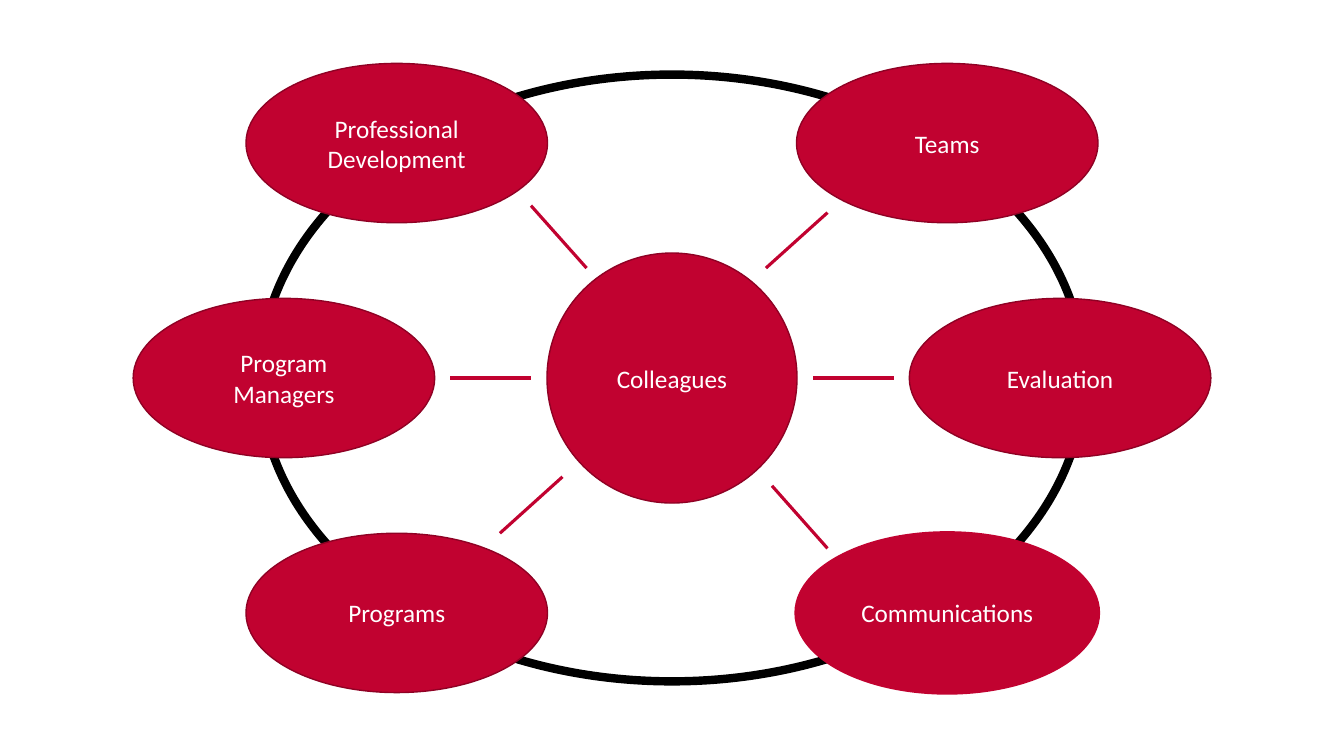
from lxml.etree import SubElement
from pptx import Presentation
from pptx.dml.color import RGBColor
from pptx.enum.shapes import MSO_CONNECTOR as CONNECTOR, MSO_SHAPE as SHAPE
from pptx.enum.text import MSO_ANCHOR as ANCHOR, PP_ALIGN as ALIGN
from pptx.oxml.ns import qn
from pptx.util import Pt

WIDTH, HEIGHT = 960, 540
CRIMSON, DARK_CRIMSON, BLACK, WHITE = "C10230", "8F0124", "000000", "FFFFFF"

# Offsets are in points from the slide centre.
SIDE_X, CORNER_X, CORNER_Y = 277.2, 196.6, 167.8
GROUPS = [
    ("Programs", -CORNER_X, CORNER_Y),
    ("Program Managers", -SIDE_X, 0),
    ("Professional Development", -CORNER_X, -CORNER_Y),
    ("Teams", CORNER_X, -CORNER_Y),
    ("Evaluation", SIDE_X, 0),
]
SPOKES = [
    ((-78.2, 70.6), (-122.9, 110.9)),
    ((111.1, -118.1), (67.1, -78.5)),
    ((-100.7, 0), (-158.3, 0)),
    ((158.5, 0), (100.9, 0)),
    ((-61, -78.5), (-100.7, -123.1)),
    ((111.1, 121.7), (71.4, 77)),
]


def color(value):
    return RGBColor.from_string(value)


class Diagram:
    font = "Calibri"
    font_size = 18

    def __init__(self, slide):
        self.shapes = slide.shapes

    def point(self, dx, dy):
        """Turn an offset from the slide centre into a slide position."""
        return Pt(WIDTH / 2 + dx), Pt(HEIGHT / 2 + dy)

    def ellipse(self, dx, dy, width, height, line, weight):
        left, top = self.point(dx - width / 2, dy - height / 2)
        sp = self.shapes.add_shape(SHAPE.OVAL, left, top, Pt(width), Pt(height))
        sp.shadow.inherit = False
        sp.line.color.rgb = color(line)
        sp.line.width = Pt(weight)
        return sp

    def ring(self, width, height):
        self.ellipse(0, 0, width, height, BLACK, 6).fill.background()

    def bubble(self, text, dx, dy, width=215.4, height=113.8, line=DARK_CRIMSON, weight=1):
        sp = self.ellipse(dx, dy, width, height, line, weight)
        sp.fill.solid()
        sp.fill.fore_color.rgb = color(CRIMSON)
        tf = sp.text_frame
        tf.text = text
        tf.word_wrap = True
        tf.vertical_anchor = ANCHOR.MIDDLE
        p = tf.paragraphs[0]
        p.alignment = ALIGN.CENTER
        font = p.runs[0].font
        font.name = self.font
        font.size = Pt(self.font_size)
        font.color.rgb = color(WHITE)

    def spoke(self, start, end):
        line = self.shapes.add_connector(
            CONNECTOR.STRAIGHT, *self.point(*start), *self.point(*end))
        line.line.color.rgb = color(CRIMSON)
        line.line.width = Pt(2.25)
        SubElement(line._element.spPr, qn("a:effectLst"))


def main():
    prs = Presentation()
    prs.slide_width, prs.slide_height = Pt(WIDTH), Pt(HEIGHT)
    diagram = Diagram(prs.slides.add_slide(prs.slide_layouts[6]))

    diagram.ring(589, 433.4)
    diagram.bubble("Colleagues", 0, 0, 178.6, 178.6)
    for name, dx, dy in GROUPS:
        diagram.bubble(name, dx, dy)
    diagram.bubble("Communications", CORNER_X, CORNER_Y, line=CRIMSON, weight=3)
    for start, end in SPOKES:
        diagram.spoke(start, end)

    prs.save("out.pptx")


if __name__ == "__main__":
    main()
